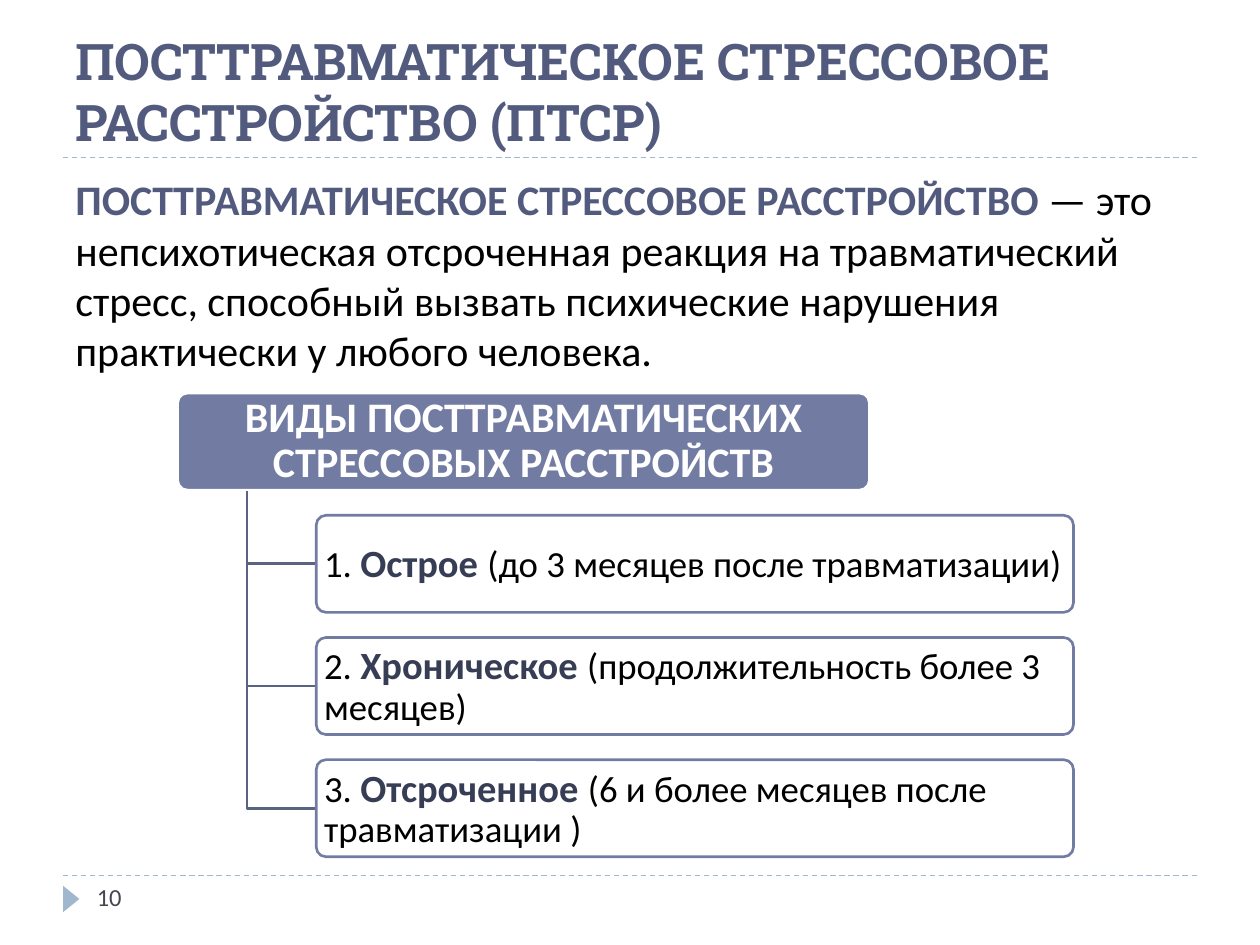
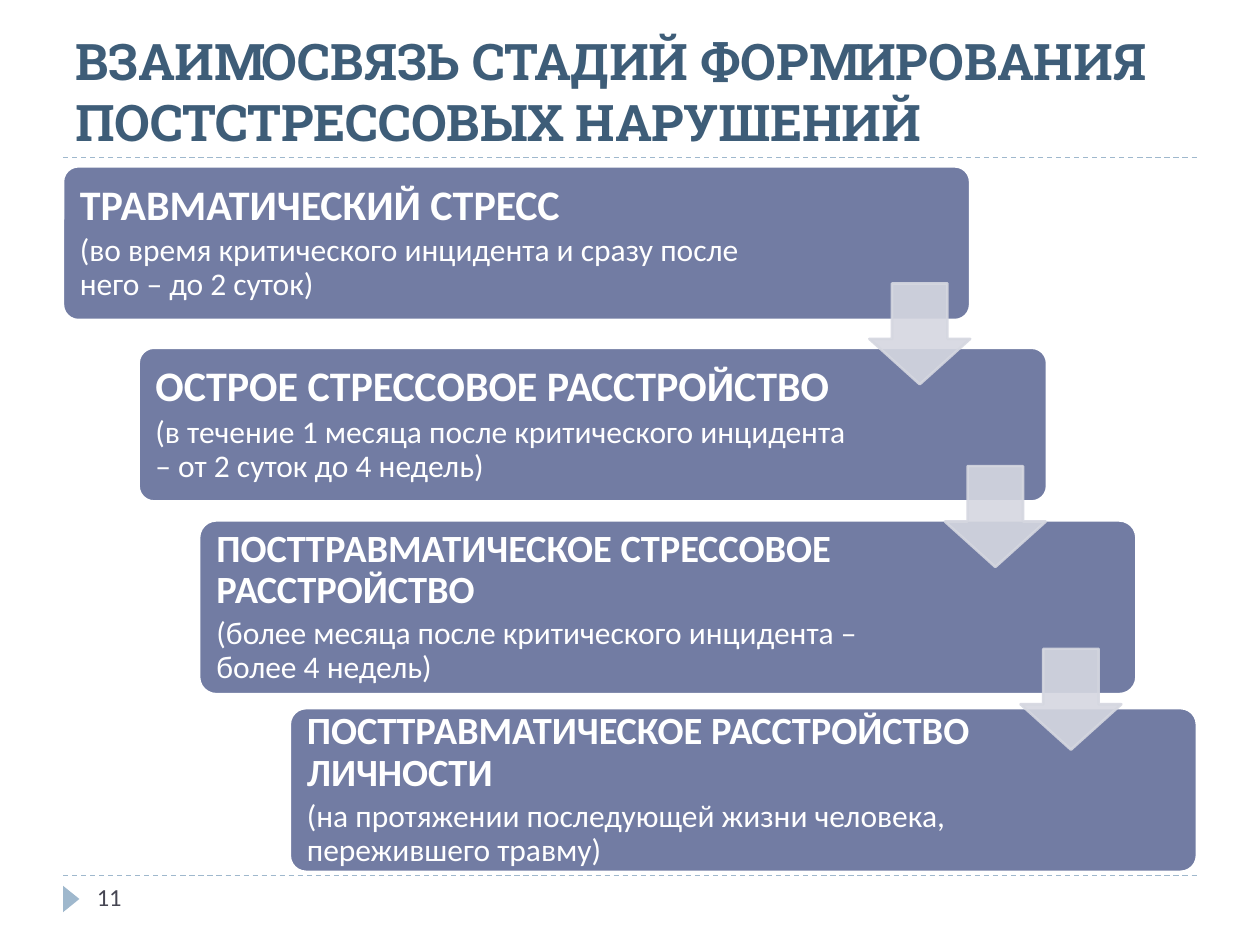
from lxml.etree import SubElement
from pptx import Presentation
from pptx.dml.color import RGBColor
from pptx.enum.dml import MSO_LINE
from pptx.enum.shapes import MSO_CONNECTOR, MSO_SHAPE
from pptx.enum.text import MSO_ANCHOR, PP_ALIGN
from pptx.oxml.ns import qn
from pptx.util import Inches, Pt

COLORS = {
    "title_violet": "525B7E",
    "title_blue": "3E5D78",
    "rule": "9FB8CD",
    "number": "464653",
    "box": "727CA3",
    "branch": "5B6383",
    "term": "373D54",
    "arrow": "D5D7E0",
    "white": "FFFFFF",
    "black": "000000",
}
TITLE_FONT, BODY_FONT = "Roboto Slab", "Calibri"

KINDS = [
    ("Острое", "(до 3 месяцев после травматизации)"),
    ("Хроническое", "(продолжительность более 3 месяцев)"),
    ("Отсроченное", "(6 и более месяцев после травматизации )"),
]
STAGES = [
    ((0.5, 1.32, 7.2, 1.22), 24, "ТРАВМАТИЧЕСКИЙ СТРЕСС",
     "(во время критического инцидента и сразу после него – до 2 суток)"),
    ((1.1, 2.76, 7.21, 1.22), 24, "ОСТРОЕ СТРЕССОВОЕ РАССТРОЙСТВО",
     "(в течение 1 месяца после критического инцидента – от 2 суток до 4 недель)"),
    ((1.58, 4.13, 7.44, 1.38), 22, "ПОСТТРАВМАТИЧЕСКОЕ СТРЕССОВОЕ РАССТРОЙСТВО",
     "(более месяца после критического инцидента – более 4 недель)"),
    ((2.3, 5.62, 7.2, 1.3), 22, "ПОСТТРАВМАТИЧЕСКОЕ РАССТРОЙСТВО ЛИЧНОСТИ",
     "(на протяжении последующей жизни человека, пережившего травму)"),
]


def rgb(color):
    """Return the named colour."""
    return RGBColor.from_string(COLORS[color])


def set_font(font, size, color, bold=False, name=BODY_FONT):
    """Set the look of a paragraph or run font."""
    font.name, font.size, font.bold = name, Pt(size), bold
    font.color.rgb = rgb(color)


def write_runs(paragraph, runs):
    """Fill a paragraph with runs of (text, size, colour, bold)."""
    for text, size, color, bold in runs:
        run = paragraph.add_run()
        run.text = text
        set_font(run.font, size, color, bold)


def set_frame(frame, margins, anchor):
    """Wrap a text frame and set its margins (left, top, right, bottom)."""
    frame.word_wrap = True
    frame.vertical_anchor = anchor
    (frame.margin_left, frame.margin_top,
     frame.margin_right, frame.margin_bottom) = map(Inches, margins)


def add_text(slide, place, anchor=MSO_ANCHOR.TOP):
    """Add a wrapping text box and return its first paragraph."""
    frame = slide.shapes.add_textbox(*map(Inches, place)).text_frame
    set_frame(frame, (0.1, 0.05, 0.1, 0.05), anchor)
    return frame.paragraphs[0]


def add_filled(slide, preset, place, fill, line=None):
    """Add a flat preset shape with an optional outline."""
    shape = slide.shapes.add_shape(preset, *map(Inches, place))
    shape.shadow.inherit = False
    shape.fill.solid()
    shape.fill.fore_color.rgb = rgb(fill)
    if line:
        shape.line.color.rgb = rgb(line)
        shape.line.width = Pt(1.5)
    else:
        shape.line.fill.background()
    return shape


def add_box(slide, place, fill, line, margins):
    """Add a rounded box and return its text frame."""
    box = add_filled(slide, MSO_SHAPE.ROUNDED_RECTANGLE, place, fill, line)
    box.adjustments[0] = 0.1
    set_frame(box.text_frame, margins, MSO_ANCHOR.MIDDLE)
    return box.text_frame


def set_tight(paragraph, align=PP_ALIGN.LEFT):
    """Give a box paragraph its alignment and close line spacing."""
    paragraph.alignment = align
    paragraph.line_spacing = 0.9


def add_rule(slide, y):
    """Draw a dashed rule across the slide."""
    rule = slide.shapes.add_connector(
        MSO_CONNECTOR.STRAIGHT, Inches(0.5), Inches(y), Inches(9.5), Inches(y))
    rule.line.color.rgb = rgb("rule")
    rule.line.width = Pt(0.75)
    rule.line.dash_style = MSO_LINE.DASH
    SubElement(rule._element.spPr, qn("a:effectLst"))


def add_page(deck, title, title_color, number):
    """Add a slide with rules, title, footer marker and number."""
    slide = deck.slides.add_slide(deck.slide_layouts[6])
    for y in (6.95, 1.25):
        add_rule(slide, y)
    marker = add_filled(slide, MSO_SHAPE.ISOSCELES_TRIANGLE,
                        (0.46, 7.07, 0.21, 0.13), "rule")
    marker.rotation = 90
    heading = add_text(slide, (0.5, 0.17, 9, 1.08), MSO_ANCHOR.BOTTOM)
    heading.text = title
    set_font(heading.font, 28.8, title_color, True, TITLE_FONT)
    footer = add_text(slide, (0.67, 6.95, 2.17, 0.4))
    footer.text = number
    set_font(footer.font, 14, "number")
    return slide


def add_branch(slide, y):
    """Draw the elbow from the heading box to a kind at height y."""
    builder = slide.shapes.build_freeform(Inches(1.96), Inches(3.9))
    builder.add_line_segments(
        [(Inches(1.96), Inches(y)), (Inches(2.51), Inches(y))], close=False)
    branch = builder.convert_to_shape()
    branch.shadow.inherit = False
    branch.fill.background()
    branch.line.color.rgb = rgb("branch")
    branch.line.width = Pt(1.5)


def add_kind(slide, index, term, detail):
    """Add one numbered kind of disorder with its branch."""
    top, height = 4.09 + 0.97 * index, 0.77
    add_branch(slide, top + height / 2)
    frame = add_box(slide, (2.51, top, 6.01, height), "white", "box",
                    (0.04, 0.03, 0.04, 0.03))
    paragraph = frame.paragraphs[0]
    set_tight(paragraph)
    write_runs(paragraph, [(f"{index + 1}. ", 21, "black", False),
                           (term, 22, "term", True),
                           (" ", 24, "term", False),
                           (detail, 21, "black", False)])


def add_stage(slide, place, size, name, period):
    """Add one stage box with its name and period."""
    frame = add_box(slide, place, "box", "white", (0.1, 0.09, 1.5, 0.09))
    lines = [(name, size, True), (period, 18, False)]
    for paragraph, (text, points, bold) in zip(
            (frame.paragraphs[0], frame.add_paragraph()), lines):
        set_tight(paragraph)
        paragraph.space_after = Pt(3)
        paragraph.text = text
        set_font(paragraph.font, points, "white", bold)


def add_step_arrow(slide, index):
    """Add the translucent arrow between two stages."""
    arrow = add_filled(slide, MSO_SHAPE.DOWN_ARROW,
                       (6.9 + 0.6 * index, 2.25 + 1.45 * index, 0.8, 0.8),
                       "arrow", "arrow")
    arrow.adjustments[0], arrow.adjustments[1] = 0.55, 0.45
    for color in arrow._element.spPr.iter(qn("a:srgbClr")):
        SubElement(color, qn("a:alpha"), val="90000")


def build_disorder(deck):
    """Build the definition and kinds of the disorder."""
    slide = add_page(deck, "ПОСТТРАВМАТИЧЕСКОЕ СТРЕССОВОЕ РАССТРОЙСТВО (ПТСР)",
                     "title_violet", "10")
    definition = add_text(slide, (0.5, 1.33, 9, 1.79))
    write_runs(definition, [
        ("ПОСТТРАВМАТИЧЕСКОЕ СТРЕССОВОЕ РАССТРОЙСТВО ", 24, "title_violet", True),
        ("— это непсихотическая отсроченная реакция на травматический стресс, "
         "способный вызвать психические нарушения практически у любого человека.",
         24, "black", False)])
    frame = add_box(slide, (1.41, 3.12, 5.49, 0.77), "box", "white",
                    (0.05, 0.03, 0.05, 0.03))
    heading = frame.paragraphs[0]
    set_tight(heading, PP_ALIGN.CENTER)
    heading.text = "ВИДЫ ПОСТТРАВМАТИЧЕСКИХ СТРЕССОВЫХ РАССТРОЙСТВ"
    set_font(heading.font, 24, "white", True)
    for index, (term, detail) in enumerate(KINDS):
        add_kind(slide, index, term, detail)


def build_stages(deck):
    """Build the staircase of stages."""
    slide = add_page(deck, "ВЗАИМОСВЯЗЬ СТАДИЙ ФОРМИРОВАНИЯ ПОСТСТРЕССОВЫХ НАРУШЕНИЙ",
                     "title_blue", "11")
    for stage in STAGES:
        add_stage(slide, *stage)
    for index in range(len(STAGES) - 1):
        add_step_arrow(slide, index)


def main():
    """Build and save the deck."""
    deck = Presentation()
    deck.slide_width, deck.slide_height = Inches(10), Inches(7.5)
    build_disorder(deck)
    build_stages(deck)
    deck.save("out.pptx")


if __name__ == "__main__":
    main()
